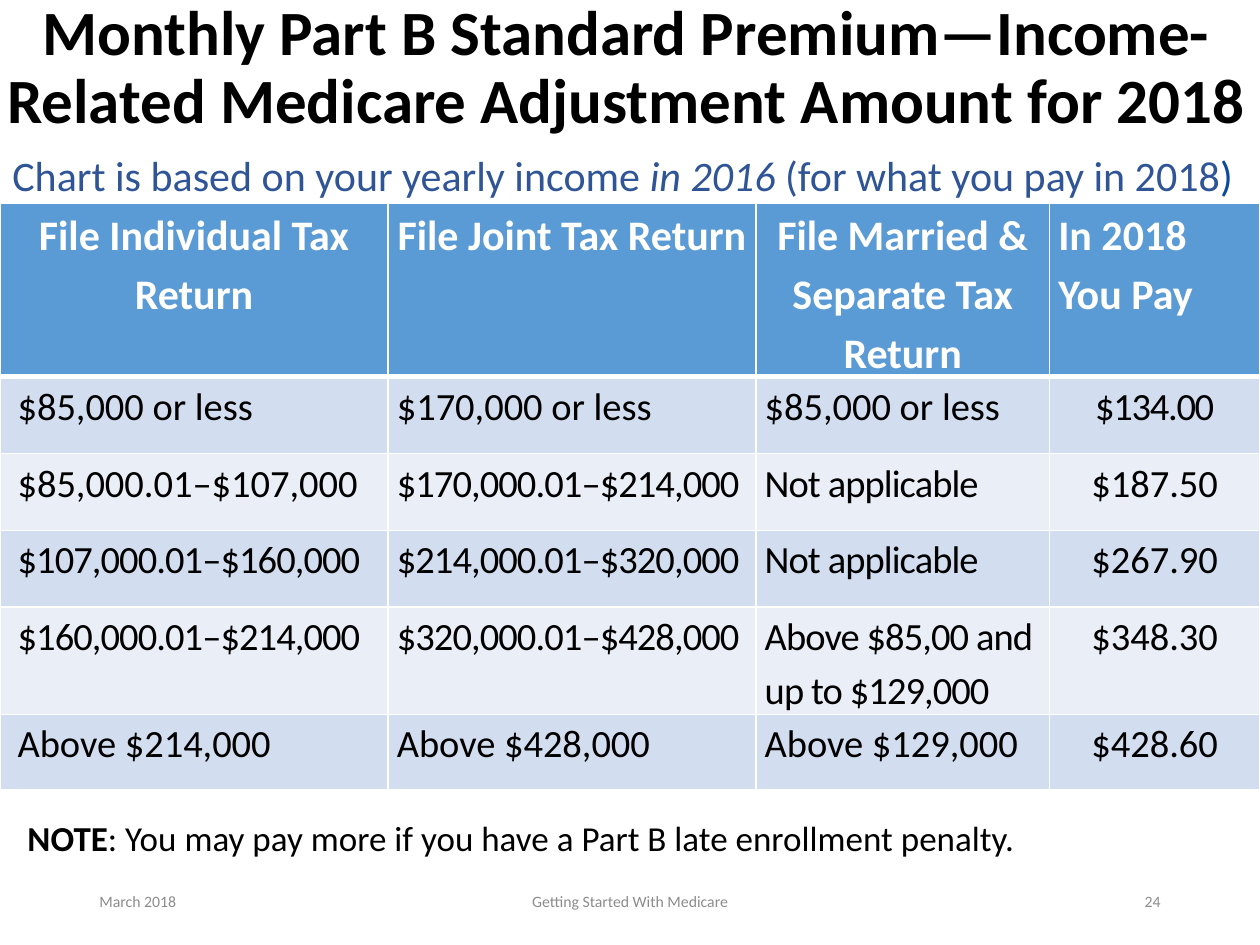
"""Build the Part B premium slide with its income table."""
from dataclasses import dataclass

from lxml.etree import SubElement
from pptx import Presentation
from pptx.dml.color import RGBColor
from pptx.enum.text import MSO_ANCHOR, MSO_AUTO_SIZE, PP_ALIGN
from pptx.oxml.ns import qn
from pptx.util import Inches, Pt

COLORS = {
    "black": "000000", "white": "FFFFFF", "blue": "2F5597", "deep": "084A9C",
    "header": "5B9BD5", "odd": "D2DEEF", "even": "EAEFF7", "gray": "8C8C8C",
}
FONT = "Calibri"
COL_WIDTHS = (3.08, 2.92, 2.33, 1.67)
HEADERS = ("File Individual Tax Return", "File Joint Tax Return",
           "File Married & Separate Tax Return", "In 2018 You Pay")


@dataclass
class Bracket:
    """One income bracket: cell texts, row height, letter spacing per cell."""
    texts: tuple[str, ...]
    height: float = 0.61
    spacing: tuple[float, ...] = (0, 0, 0, 0)


@dataclass
class Footer:
    """A small text at the foot of the slide."""
    text: str
    left: float
    width: float
    align: PP_ALIGN


BRACKETS = (
    Bracket(("$85,000 or less", "$170,000 or less", "$85,000 or less", "$134.00"),
            spacing=(0, 0, 0, -0.7)),
    Bracket(("$85,000.01–$107,000", "$170,000.01–$214,000", "Not applicable", "$187.50"),
            spacing=(0, -0.5, -0.5, 0)),
    Bracket(("$107,000.01–$160,000", "$214,000.01–$320,000", "Not applicable", "$267.90"),
            spacing=(-0.5, -0.5, -0.5, 0)),
    Bracket(("$160,000.01–$214,000", "$320,000.01–$428,000",
             "Above $85,00 and up to $129,000", "$348.30"),
            height=0.85, spacing=(-0.5, -0.5, -0.5, 0)),
    Bracket(("Above $214,000", "Above $428,000", "Above $129,000", "$428.60"), height=0.6),
)
FOOTERS = (
    Footer("March 2018", 0.69, 2.25, PP_ALIGN.LEFT),
    Footer("Getting Started With Medicare", 3.31, 3.38, PP_ALIGN.CENTER),
    Footer("24", 7.06, 2.25, PP_ALIGN.RIGHT),
)


def add_run(p, text: str, *, size: float, color: str = "black", bold: bool = False,
            italic: bool = False, spacing: float = 0) -> None:
    """Append a formatted run to a paragraph."""
    r = p.add_run()
    r.text = text
    r.font.name = FONT
    r.font.size = Pt(size)
    r.font.bold = bold
    r.font.italic = italic
    r.font.color.rgb = RGBColor.from_string(COLORS[color])
    if spacing:
        r.font._element.set("spc", str(round(spacing * 100)))


def add_box(slide, left: float, top: float, width: float, height: float, *,
            align: PP_ALIGN = PP_ALIGN.LEFT, anchor: MSO_ANCHOR = MSO_ANCHOR.TOP):
    """Add a wrapping text box and return its first paragraph."""
    sp = slide.shapes.add_textbox(Inches(left), Inches(top), Inches(width), Inches(height))
    tf = sp.text_frame
    tf.word_wrap = True
    tf.vertical_anchor = anchor
    p = tf.paragraphs[0]
    p.alignment = align
    return p


def add_borders(cell, top: float, bottom: float) -> None:
    """Draw white borders round a cell."""
    tc_pr = cell._tc.get_or_add_tcPr()
    sides = (("lnL", 1), ("lnR", 1), ("lnT", top), ("lnB", bottom))
    for i, (side, width) in enumerate(sides):
        ln = SubElement(tc_pr, qn(f"a:{side}"), w=str(Pt(width)))
        fill = SubElement(ln, qn("a:solidFill"))
        SubElement(fill, qn("a:srgbClr"), val=COLORS["white"])
        tc_pr.insert(i, ln)


def fill_cell(cell, text: str, *, fill: str, align: PP_ALIGN, left: float = 0.07,
              top: float = 1, bottom: float = 1, **font) -> None:
    """Write and format one table cell."""
    cell.margin_left, cell.margin_right = Inches(left), Inches(0.07)
    cell.margin_top = cell.margin_bottom = 0
    cell.fill.solid()
    cell.fill.fore_color.rgb = RGBColor.from_string(COLORS[fill])
    add_borders(cell, top, bottom)
    p = cell.text_frame.paragraphs[0]
    p.alignment = align
    p.line_spacing = 1.15
    add_run(p, text, **font)


def add_title(slide) -> None:
    """Place and format the slide title."""
    sp = slide.shapes.title
    sp.left, sp.top, sp.width, sp.height = Inches(-0.13), 0, Inches(10.2), Inches(1.09)
    tf = sp.text_frame
    tf.word_wrap = True
    tf.auto_size = MSO_AUTO_SIZE.NONE
    tf.vertical_anchor = MSO_ANCHOR.MIDDLE
    p = tf.paragraphs[0]
    p.alignment = PP_ALIGN.CENTER
    p.line_spacing = 0.9
    add_run(p, "Monthly Part B Standard Premium—Income-Related Medicare "
               "Adjustment Amount for 2018", size=36, bold=True)


def add_premium_table(slide) -> None:
    """Draw the premium table from the headers and brackets."""
    heights = [1.37] + [b.height for b in BRACKETS]
    tbl = slide.shapes.add_table(len(heights), len(HEADERS), 0, Inches(1.61),
                                 Inches(10), Inches(sum(heights))).table
    for col, width in zip(tbl.columns, COL_WIDTHS):
        col.width = Inches(width)
    for row, height in zip(tbl.rows, heights):
        row.height = Inches(height)
    last = len(HEADERS) - 1
    for c, text in enumerate(HEADERS):
        align = PP_ALIGN.LEFT if c == last else PP_ALIGN.CENTER
        fill_cell(tbl.cell(0, c), text, fill="header", align=align, bottom=3,
                  size=24, color="white", bold=True)
    for r, bracket in enumerate(BRACKETS, 1):
        for c, (text, spacing) in enumerate(zip(bracket.texts, bracket.spacing)):
            fill_cell(tbl.cell(r, c), text, fill="odd" if r % 2 else "even",
                      align=PP_ALIGN.CENTER if c == last else PP_ALIGN.LEFT,
                      left=0.14 if c == 0 else 0.07, top=3 if r == 1 else 1,
                      size=22, spacing=spacing)


def main() -> None:
    """Build and save the slide."""
    prs = Presentation()
    prs.slide_width, prs.slide_height = Inches(10), Inches(7.5)
    s = prs.slides.add_slide(prs.slide_layouts[5])
    add_title(s)

    p = add_box(s, 0, 1.14, 10, 0.5)
    add_run(p, "Chart is based on your yearly income ", size=24, color="blue")
    add_run(p, "in 2016 ", size=24, color="blue", italic=True)
    add_run(p, "(for what you pay in 2018", size=24, color="blue")
    add_run(p, ")", size=24, color="deep")

    add_premium_table(s)

    p = add_box(s, 0.12, 6.43, 9.73, 0.44)
    add_run(p, "NOTE", size=20, bold=True)
    add_run(p, ": You may pay more if you have a Part B late enrollment penalty.", size=20)

    for f in FOOTERS:
        p = add_box(s, f.left, 6.95, f.width, 0.4, align=f.align, anchor=MSO_ANCHOR.MIDDLE)
        add_run(p, f.text, size=9, color="gray")
    prs.save("out.pptx")


if __name__ == "__main__":
    main()
